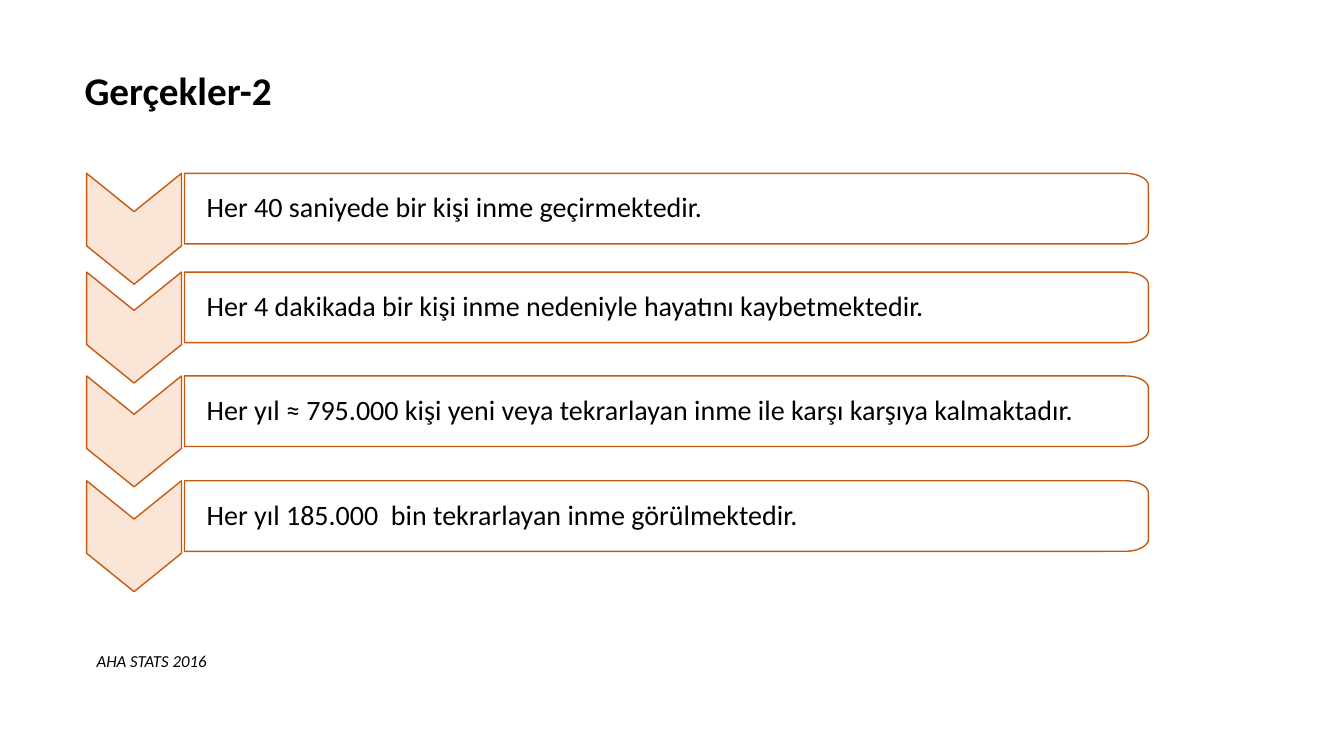
from math import cos, pi, sin

from lxml import etree
from pptx import Presentation
from pptx.dml.color import RGBColor
from pptx.enum.text import MSO_ANCHOR, MSO_AUTO_SIZE, PP_ALIGN
from pptx.oxml.ns import qn
from pptx.util import Inches, Pt

LEFT = PP_ALIGN.LEFT
MIDDLE, TOP = MSO_ANCHOR.MIDDLE, MSO_ANCHOR.TOP
GROW = MSO_AUTO_SIZE.SHAPE_TO_FIT_TEXT

FACTS = [
    (1.72, "Her 40 saniyede bir kişi inme geçirmektedir."),
    (2.7, "Her 4 dakikada bir kişi inme nedeniyle hayatını kaybetmektedir."),
    (3.73, "Her yıl ≈ 795.000 kişi yeni veya tekrarlayan inme ile karşı karşıya kalmaktadır."),
    (4.77, "Her yıl 185.000  bin tekrarlayan inme görülmektedir."),
]


def color(hex_value):
    return RGBColor.from_string(hex_value)


class FactSlide:
    FONT = "Calibri"
    TEXT, OUTLINE, CHEVRON, BAR = "000000", "C55A11", "FBE5D6", "FFFFFF"

    def __init__(self, presentation):
        self.slide = presentation.slides.add_slide(presentation.slide_layouts[6])

    def set_text(self, shape, text, size, bold=False, italic=False, line_spacing=None):
        frame = shape.text_frame
        frame.word_wrap = True
        frame.text = text
        paragraph = frame.paragraphs[0]
        paragraph.alignment = LEFT
        paragraph.line_spacing = line_spacing
        font = paragraph.runs[0].font
        font.name, font.size = self.FONT, Pt(size)
        font.bold, font.italic = bold, italic
        font.color.rgb = color(self.TEXT)

    def text_box(self, left, top, width, height, text, size, **style):
        box = self.slide.shapes.add_textbox(
            Inches(left), Inches(top), Inches(width), Inches(height))
        self.set_text(box, text, size, **style)
        box.text_frame.auto_size = GROW
        box.text_frame.vertical_anchor = TOP

    def outline(self, points, fill):
        """Draw a closed, outlined polygon through points given in inches."""
        start, *rest = [(Inches(x), Inches(y)) for x, y in points]
        builder = self.slide.shapes.build_freeform(*start)
        builder.add_line_segments(rest, close=True)
        shape = builder.convert_to_shape()
        shape.shadow.inherit = False
        shape.fill.solid()
        shape.fill.fore_color.rgb = color(fill)
        shape.line.color.rgb = color(self.OUTLINE)
        shape.line.width = Pt(1)
        return shape

    def chevron(self, left, top, width=0.94, side=0.72, point=0.38):
        middle, right = left + width / 2, left + width
        self.outline([(left, top), (middle, top + point), (right, top),
                      (right, top + side), (middle, top + side + point),
                      (left, top + side)], self.CHEVRON)

    def fact_bar(self, left, top, text, width=9.56, height=0.7):
        """Draw a bar with elliptical right corners and its text."""
        radius_x, radius_y, steps = 0.23, 0.12, 16
        center_x = left + width - radius_x
        angles = [pi / 2 * step / steps for step in range(steps + 1)]
        upper = [(center_x + radius_x * sin(angle),
                  top + radius_y * (1 - cos(angle))) for angle in angles]
        lower = [(x, 2 * top + height - y) for x, y in reversed(upper)]
        bar = self.outline([(left, top), *upper, *lower, (left, top + height)], self.BAR)
        fill = bar.element.spPr.find(qn("a:solidFill"))
        etree.SubElement(fill[0], qn("a:alpha"), val="90000")
        self.set_text(bar, text, 20, line_spacing=0.9)
        frame = bar.text_frame
        frame.vertical_anchor = MIDDLE
        frame.margin_left = Inches(0.22)
        frame.margin_top = frame.margin_right = frame.margin_bottom = Inches(0.07)


def main():
    presentation = Presentation()
    presentation.slide_width = Inches(13.33)
    presentation.slide_height = Inches(7.5)
    slide = FactSlide(presentation)
    for top, text in FACTS:
        slide.fact_bar(1.83, top, text)
        slide.chevron(0.86, top)
    slide.text_box(0.74, 0.66, 10, 0.53, "Gerçekler-2", 28, bold=True, line_spacing=0.9)
    slide.text_box(0.86, 6.41, 3.77, 0.3, "AHA STATS 2016", 12, italic=True)
    presentation.save("out.pptx")


if __name__ == "__main__":
    main()
